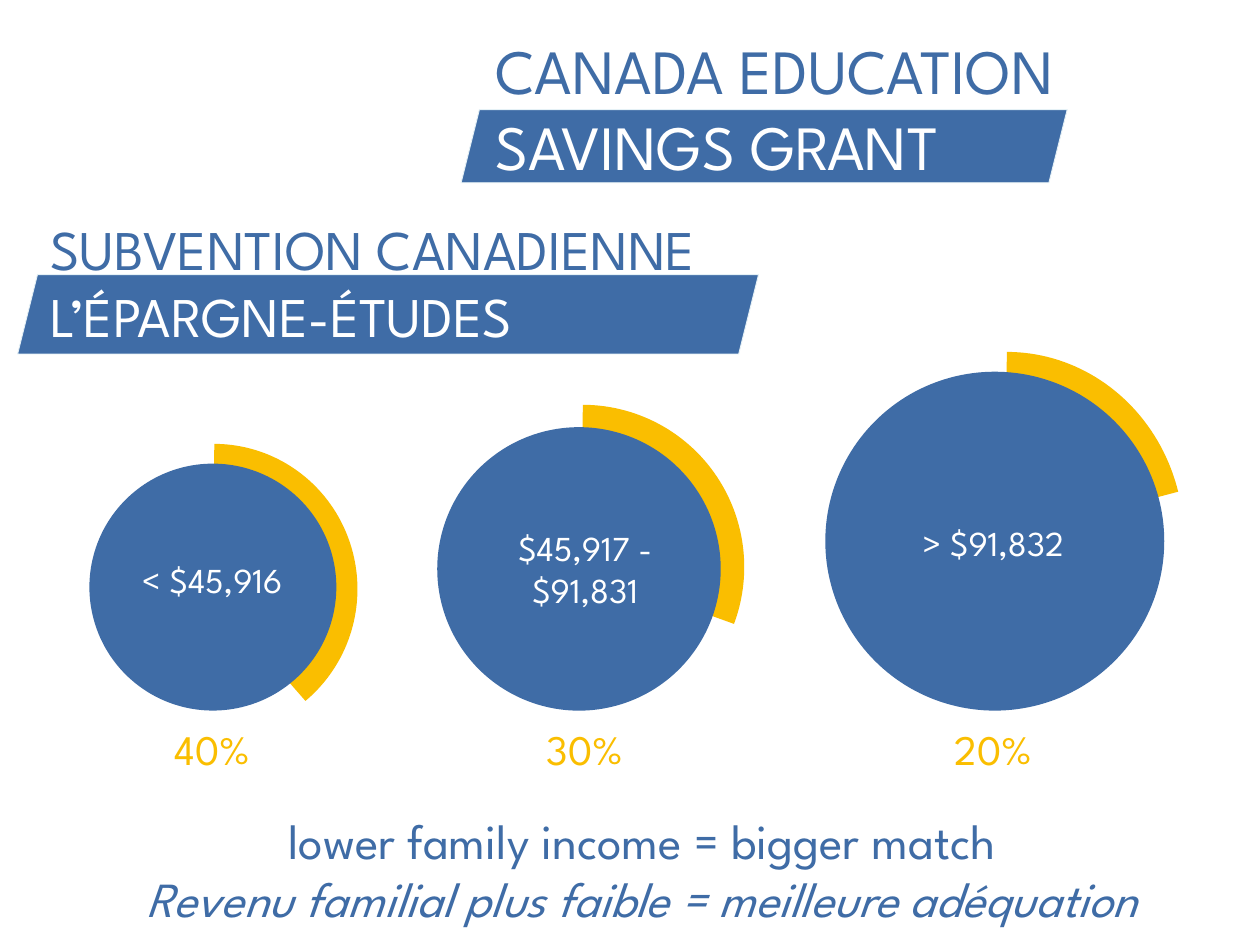
import pptx
import pptx.util
import pptx.dml.color
import pptx.enum.shapes
import pptx.enum.text

Inches = pptx.util.Inches
SHAPE = pptx.enum.shapes.MSO_SHAPE
ALIGN = pptx.enum.text.PP_ALIGN
FONT = "League Spartan"
COLORS = {"blue": "3F6CA6", "gold": "FABE00", "white": "FFFFFF", "edge": "E5F1F6"}

HEADINGS = [
    {"lines": ("CANADA EDUCATION ", "SAVINGS GRANT"), "size": 36,
     "box": (3.83, 0.2, 5.56, 1.31), "bar": (3.66, 0.87, 4.81, 0.58)},
    {"lines": ("SUBVENTION CANADIENNE ", "L’ÉPARGNE-ÉTUDES"), "size": 32,
     "box": (0.3, 1.65, 6.72, 1.18), "bar": (0.14, 2.18, 5.88, 0.63)},
]
BRACKETS = [
    {"income": "< $45,916", "match": "40%", "circle": (0.71, 3.68, 1.96),
     "arc": (0.66, 3.62, 2.08, 2.11), "arc_end": 50.95,
     "income_box": (0.56, 4.38, 2.25, 0.44), "match_left": 1.1},
    {"income": "$45,917 - $91,831", "match": "30%", "circle": (3.47, 3.39, 2.25),
     "arc": (3.44, 3.31, 2.37, 2.38), "arc_end": 20.67,
     "income_box": (3.66, 4.13, 1.97, 0.77), "match_left": 4.06},
    {"income": "> $91,832", "match": "20%", "circle": (6.55, 2.95, 2.69),
     "arc": (6.68, 2.89, 2.62, 2.78), "arc_end": 344.43,
     "income_box": (6.76, 4.09, 2.25, 0.44), "match_left": 7.3},
]
SUMMARY = [
    ("lower family income = bigger match", False),
    ("Revenu familial plus faible = meilleure adéquation", True),
]
ARC_START = 270
ARC_UNITS_PER_DEGREE = 0.6


def rgb(name):
    return pptx.dml.color.RGBColor.from_string(COLORS[name])


def add_shape(slide, kind, box, fill=None, line=None, width=0):
    shape = slide.shapes.add_shape(kind, *map(Inches, box))
    shape.shadow.inherit = False
    if fill:
        shape.fill.solid()
        shape.fill.fore_color.rgb = rgb(fill)
    else:
        shape.fill.background()
    if line:
        shape.line.color.rgb = rgb(line)
        shape.line.width = pptx.util.Pt(width)
    else:
        shape.line.fill.background()
    return shape


def style(paragraph, size, color=None, align=ALIGN.CENTER, italic=None):
    paragraph.alignment = align
    paragraph.font.name = FONT
    paragraph.font.size = pptx.util.Pt(size)
    paragraph.font.italic = italic
    if color:
        paragraph.font.color.rgb = rgb(color)


def add_text(slide, box, lines, size, color):
    shape = slide.shapes.add_textbox(*map(Inches, box))
    frame = shape.text_frame
    frame.word_wrap = True
    for index, (text, italic) in enumerate(lines):
        paragraph = frame.add_paragraph() if index else frame.paragraphs[0]
        paragraph.text = text
        style(paragraph, size, color, italic=italic or None)


def fill_heading(shape, heading):
    shape.left, shape.top, shape.width, shape.height = map(Inches, heading["box"])
    frame = shape.text_frame
    frame.word_wrap = True
    frame.auto_size = pptx.enum.text.MSO_AUTO_SIZE.NONE
    frame.vertical_anchor = pptx.enum.text.MSO_ANCHOR.TOP
    paragraph = frame.paragraphs[0]
    style(paragraph, heading["size"], align=ALIGN.LEFT)
    for text, color in zip(heading["lines"], ("blue", "white")):
        run = paragraph.add_run()
        run.text = text
        run.font.color.rgb = rgb(color)


def add_bracket(slide, bracket):
    arc = add_shape(slide, SHAPE.ARC, bracket["arc"], line="gold", width=14)
    arc.adjustments[0] = ARC_START * ARC_UNITS_PER_DEGREE
    arc.adjustments[1] = bracket["arc_end"] * ARC_UNITS_PER_DEGREE
    left, top, diameter = bracket["circle"]
    add_shape(slide, SHAPE.OVAL, (left, top, diameter, diameter), "blue")
    add_text(slide, bracket["income_box"], [(bracket["income"], False)], 20, "white")
    add_text(slide, (bracket["match_left"], 5.69, 1.17, 0.5),
             [(bracket["match"], False)], 24, "gold")


def main():
    """Build the education savings grant slide."""
    presentation = pptx.Presentation()
    presentation.slide_width, presentation.slide_height = Inches(10), Inches(7.5)
    slide = presentation.slides.add_slide(presentation.slide_layouts[5])
    title = slide.shapes.title
    for bracket in BRACKETS:
        add_bracket(slide, bracket)
    for index, heading in enumerate(HEADINGS):
        bar = add_shape(slide, SHAPE.PARALLELOGRAM, heading["bar"], "blue", "edge", 0.5)
        shape = slide.shapes.add_textbox(0, 0, 0, 0) if index else title
        bar._element.addnext(shape._element)
        fill_heading(shape, heading)
    add_text(slide, (0, 6.38, 10.19, 1.04), SUMMARY, 28, "blue")
    presentation.save("out.pptx")


if __name__ == "__main__":
    main()
